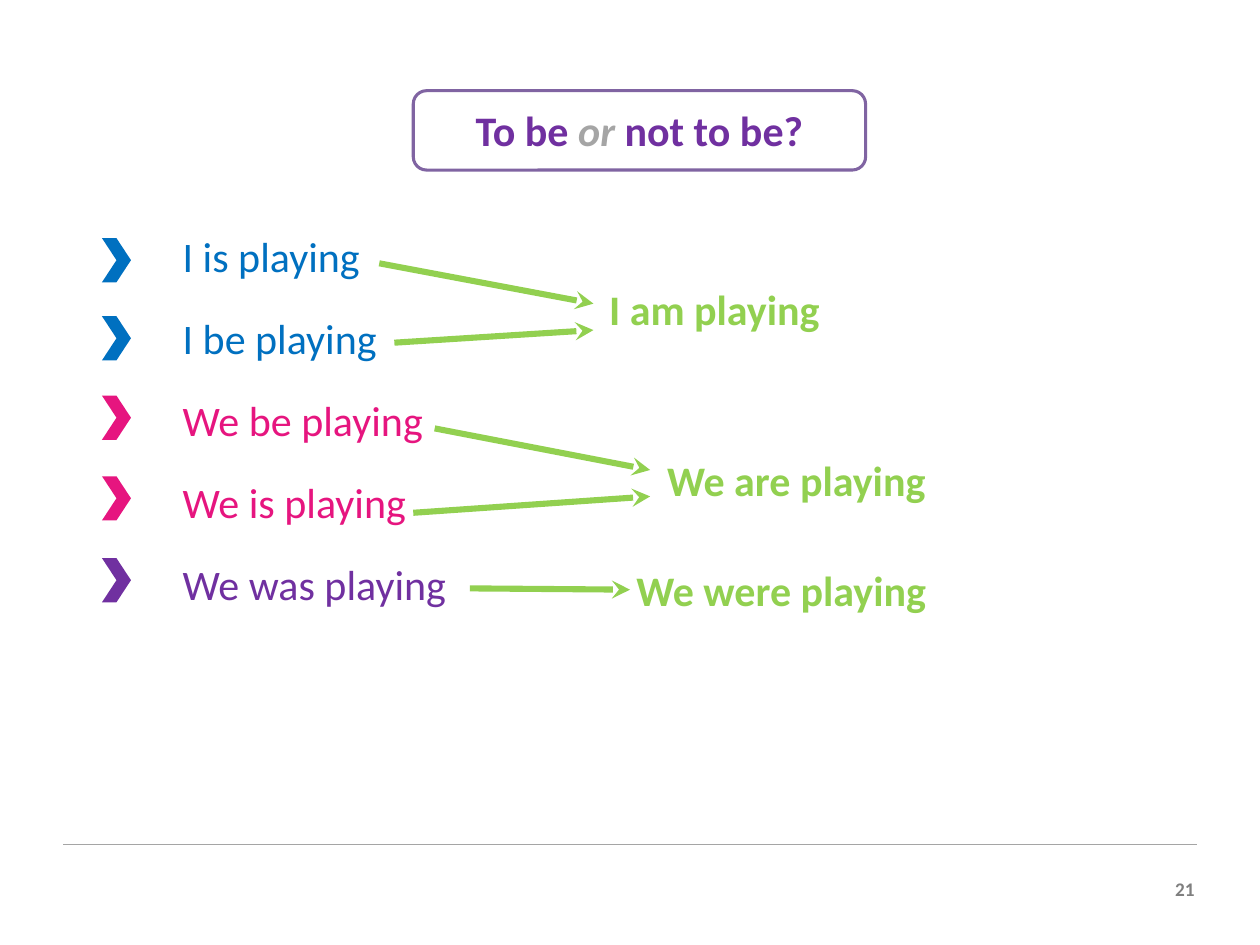
from lxml import etree
from pptx import Presentation
from pptx.dml.color import RGBColor
from pptx.enum.shapes import MSO_CONNECTOR, MSO_SHAPE
from pptx.enum.text import PP_ALIGN
from pptx.oxml.ns import qn
from pptx.util import Inches, Pt

BLUE = RGBColor(0x00, 0x70, 0xC0)
PINK = RGBColor(0xE6, 0x15, 0x7F)
PURPLE = RGBColor(0x70, 0x30, 0xA0)
FRAME_PURPLE = RGBColor(0x80, 0x64, 0xA2)
GREEN = RGBColor(0x92, 0xD0, 0x50)
GREY = RGBColor(0xA5, 0xA5, 0xA5)
DARK_GREY = RGBColor(0x7F, 0x7F, 0x7F)
WHITE = RGBColor(0xFF, 0xFF, 0xFF)

STRAIGHT = MSO_CONNECTOR.STRAIGHT
CHEVRON = MSO_SHAPE.CHEVRON
ROUNDED = MSO_SHAPE.ROUNDED_RECTANGLE
LEFT, CENTER, RIGHT = PP_ALIGN.LEFT, PP_ALIGN.CENTER, PP_ALIGN.RIGHT

# Wrong sentence, colour, top of its chevron
MISTAKES = [
    ("I is playing", BLUE, 1.89),
    ("I be playing", BLUE, 2.51),
    ("We be playing", PINK, 3.14),
    ("We is playing", PINK, 3.78),
    ("We was playing", PURPLE, 4.43),
]
# Corrected sentence, left and top of its box, arrows (x1, y1, x2, y2) to it
CORRECTIONS = [
    ("I am playing", 1.88, 2.2,
     [(3.01, 2.09, 4.71, 2.41), (3.13, 2.72, 4.71, 2.62)]),
    ("We are playing", 2.53, 3.56,
     [(3.45, 3.4, 5.16, 3.73), (3.28, 4.07, 5.16, 3.94)]),
    ("We were playing", 2.41, 4.43, [(3.73, 4.67, 5, 4.68)]),
]


def add_text(slide, box, paragraphs, align=LEFT, size=24, inset=0.1, gap=0):
    """Each paragraph is a list of (text, colour, bold, italic) runs."""
    frame = slide.shapes.add_textbox(*map(Inches, box)).text_frame
    margins = {"margin_left": inset, "margin_right": inset,
               "margin_top": 0.05, "margin_bottom": 0.05}
    for side, length in margins.items():
        setattr(frame, side, Inches(length))
    frame.word_wrap = True
    for index, runs in enumerate(paragraphs):
        paragraph = frame.add_paragraph() if index else frame.paragraphs[0]
        paragraph.alignment = align
        if index:
            paragraph.space_before = Pt(gap)
        for text, colour, bold, italic in runs:
            run = paragraph.add_run()
            run.text = text
            run.font.color.rgb = colour
            formats = {"name": "Calibri", "size": Pt(size),
                       "bold": bold, "italic": italic}
            for attribute, value in formats.items():
                setattr(run.font, attribute, value)


def add_filled(slide, preset, box, fill, adjustment):
    shape = slide.shapes.add_shape(preset, *map(Inches, box))
    shape.shadow.inherit = False
    shape.adjustments[0] = adjustment
    shape.fill.solid()
    shape.fill.fore_color.rgb = fill
    shape.line.fill.background()
    return shape


def add_line(slide, ends, colour, width, arrow=False):
    connector = slide.shapes.add_connector(STRAIGHT, *map(Inches, ends))
    connector.line.color.rgb = colour
    connector.line.width = Pt(width)
    properties = connector._element.spPr
    if arrow:
        outline = properties.find(qn("a:ln"))
        etree.SubElement(outline, qn("a:tailEnd"), type="stealth")
    etree.SubElement(properties, qn("a:effectLst"))


def add_footer(slide, left, top, width):
    add_line(slide, (left, top, left + width, top), GREY, 0.75)
    add_text(slide, (left + width - 0.3, top + 0.21, 0.38, 0.29),
             [[("21", DARK_GREY, True, False)]], RIGHT, size=11)


def add_title(slide, left, top, width, height):
    frame = add_filled(slide, ROUNDED, (left, top, width, height), WHITE, 0.167)
    frame.line.color.rgb = FRAME_PURPLE
    frame.line.width = Pt(1.75)
    add_text(slide, (left, top + 0.06, width, 0.51), [[
        ("To be ", PURPLE, True, False),
        ("or", GREY, True, True),
        (" not to be?", PURPLE, True, False),
    ]], CENTER)


def add_mistakes(slide, left, top, width, height):
    sentences = [[(text, colour, False, False)] for text, colour, _ in MISTAKES]
    add_text(slide, (left, top, width, height), sentences, inset=0.05, gap=18)
    for _, colour, chevron_top in MISTAKES:
        add_filled(slide, CHEVRON, (left - 0.59, chevron_top, 0.23, 0.35),
                   colour, 0.5)


def add_corrections(slide, width, height):
    for text, left, top, arrows in CORRECTIONS:
        add_text(slide, (left, top, width, height),
                 [[(text, GREEN, True, False)]], CENTER)
        for ends in arrows:
            add_line(slide, ends, GREEN, 3.5, arrow=True)


def main():
    deck = Presentation()
    deck.slide_width, deck.slide_height = Inches(10), Inches(7.5)
    slide = deck.slides.add_slide(deck.slide_layouts[6])
    add_footer(slide, 0.5, 6.7, 9)
    add_mistakes(slide, 1.4, 1.78, 8.06, 5.17)
    add_title(slide, 3.28, 0.72, 3.59, 0.63)
    add_corrections(slide, 7.58, 0.51)
    deck.save("out.pptx")


if __name__ == "__main__":
    main()
